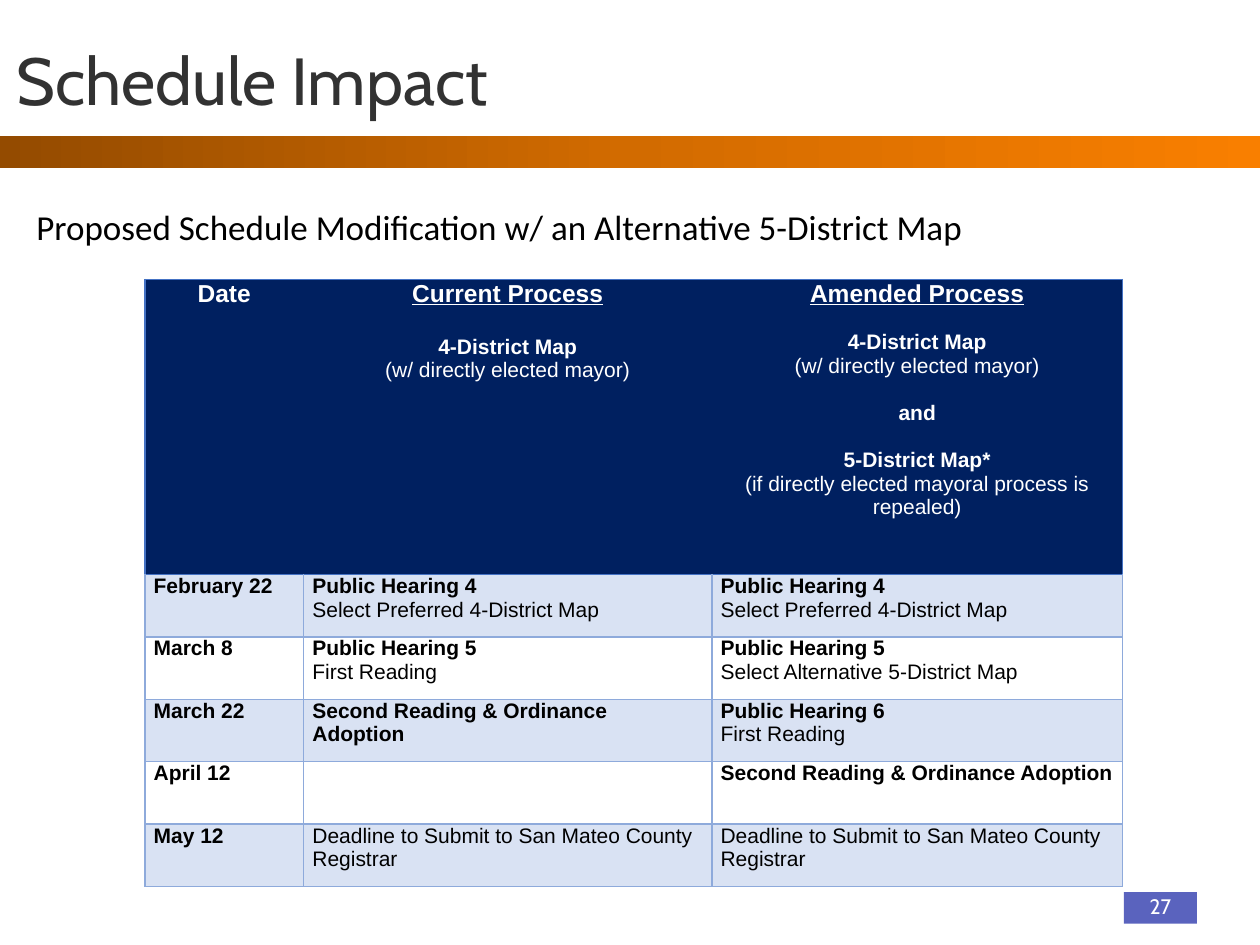
"""Build the Schedule Impact slide with its table of current and amended dates."""
import copy
import pptx
import pptx.dml.color
import pptx.enum.shapes
import pptx.enum.text
import pptx.oxml
import pptx.oxml.ns
import pptx.util

Inches, Pt = pptx.util.Inches, pptx.util.Pt
ALIGN = pptx.enum.text.PP_ALIGN
MIDDLE = pptx.enum.text.MSO_ANCHOR.MIDDLE
RECT = pptx.enum.shapes.MSO_SHAPE.RECTANGLE

COLORS = {
    "title": "323232", "black": "000000", "white": "FFFFFF", "badge": "5A63BE",
    "navy": "002060", "pale": "D9E2F3", "edge": "8EAADB", "rim": "4472C4",
}
BAND = [(0, "944B00"), (0.5, "D26B00"), (1, "F97F00")]

TITLE = "Schedule Impact"
LEAD = "Proposed Schedule Modification w/ an Alternative 5-District Map"
MAYOR = "(w/ directly elected mayor)"
HEAD = [
    [("Date", {"size": 14, "bold": True})],
    [("Current Process", {"size": 14, "bold": True, "under": True}),
     ("4-District Map", {"bold": True, "gap": 16}),
     (MAYOR, {})],
    [("Amended Process", {"size": 14, "bold": True, "under": True}),
     ("4-District Map", {"bold": True, "gap": 13.5}),
     (MAYOR, {}),
     ("and", {"bold": True, "gap": 13.5}),
     ("5-District Map*", {"bold": True, "gap": 13.5}),
     ("(if directly elected mayoral process is repealed)", {})],
]
ADOPT = ("Second Reading & Ordinance Adoption", "")
SUBMIT = ("", "Deadline to Submit to San Mateo County Registrar")
ROWS = [
    ("February 22", ("Public Hearing 4", "Select Preferred 4-District Map"),
     ("Public Hearing 4", "Select Preferred 4-District Map")),
    ("March 8", ("Public Hearing 5", "First Reading"),
     ("Public Hearing 5", "Select Alternative 5-District Map")),
    ("March 22", ADOPT, ("Public Hearing 6", "First Reading")),
    ("April 12", ("", ""), ADOPT),
    ("May 12", SUBMIT, SUBMIT),
]
WIDTHS = [1.26, 3.24, 3.26]
HEAD_H, ROW_H = 2.34, 0.495


def paint(fill, name):
    fill.solid()
    fill.fore_color.rgb = pptx.dml.color.RGBColor.from_string(COLORS[name])


def write(frame, text, size=12, font="Arial", color="black", bold=False,
          under=False, align=ALIGN.LEFT, gap=0, line=None):
    first = frame.paragraphs[0]
    para = frame.add_paragraph() if first.runs else first
    para.alignment = align
    if gap:
        para.space_before = Pt(gap)
    if line:
        para.line_spacing = line
    run = para.add_run()
    run.text = text
    run.font.size, run.font.name = Pt(size), font
    run.font.bold, run.font.underline = bold, under
    run.font.color.rgb = pptx.dml.color.RGBColor.from_string(COLORS[color])


def add_box(slide, place, anchor=pptx.enum.text.MSO_ANCHOR.TOP):
    frame = slide.shapes.add_textbox(*map(Inches, place)).text_frame
    frame.word_wrap = True
    frame.vertical_anchor = anchor
    return frame


def add_rect(slide, place):
    shape = slide.shapes.add_shape(RECT, *map(Inches, place))
    shape.shadow.inherit = False
    shape.line.fill.background()
    return shape


def add_band(slide):
    fill = add_rect(slide, (0, 1.08, 10, 0.25)).fill
    fill.gradient()
    fill.gradient_angle = 0
    last = fill.gradient_stops[1]._gs
    last.addnext(copy.deepcopy(last))
    for stop, (place, tone) in zip(fill.gradient_stops, BAND):
        stop.position = place
        stop.color.rgb = pptx.dml.color.RGBColor.from_string(tone)


def set_edges(cell, edges):
    props = cell._tc.get_or_add_tcPr()
    space = pptx.oxml.ns.nsdecls("a")
    for spot, (side, name) in enumerate(edges.items()):
        inner = (f'<a:solidFill><a:srgbClr val="{COLORS[name]}"/></a:solidFill>'
                 if name else "<a:noFill/>")
        props.insert(spot, pptx.oxml.parse_xml(
            f'<a:{side} {space} w="12700">{inner}</a:{side}>'))


def add_grid(slide):
    place = (1.15, 2.22, sum(WIDTHS), HEAD_H + ROW_H * len(ROWS))
    grid = slide.shapes.add_table(
        len(ROWS) + 1, len(WIDTHS), *map(Inches, place)).table
    for col, width in zip(grid.columns, WIDTHS):
        col.width = Inches(width)
    for r, row in enumerate(grid.rows):
        row.height = Inches(ROW_H if r else HEAD_H)
        for c, cell in enumerate(row.cells):
            cell.margin_left = cell.margin_right = Inches(0.07)
            cell.margin_top = cell.margin_bottom = 0
            if r == 0:
                paint(cell.fill, "navy")
                set_edges(cell, {"lnL": None if c else "rim",
                                 "lnR": "rim" if c == 2 else None,
                                 "lnT": "rim", "lnB": "rim"})
                for text, style in HEAD[c]:
                    write(cell.text_frame, text, color="white",
                          align=ALIGN.CENTER, **style)
                continue
            paint(cell.fill, "pale" if r % 2 else "white")
            set_edges(cell, {"lnL": "edge", "lnR": "edge",
                             "lnT": "rim" if r == 1 else "edge", "lnB": "edge"})
            item = ROWS[r - 1][c]
            strong, plain = item if c else (item, "")
            for text, bold in ((strong, True), (plain, False)):
                if text:
                    write(cell.text_frame, text, bold=bold)


def main():
    deck = pptx.Presentation()
    deck.slide_width, deck.slide_height = Inches(10), Inches(7.5)
    slide = deck.slides.add_slide(deck.slide_layouts[6])
    badge = add_rect(slide, (8.92, 7.08, 0.58, 0.25))
    paint(badge.fill, "badge")
    badge.text_frame.vertical_anchor = MIDDLE
    write(badge.text_frame, "27", font="Cabin", color="white",
          align=ALIGN.CENTER, line=0.9)
    add_band(slide)
    write(add_box(slide, (0.03, 0.25, 8.89, 0.75), MIDDLE), TITLE,
          size=38, font="Cabin", color="title")
    write(add_box(slide, (0.19, 1.58, 9.4, 0.5)), LEAD, size=20, font="Calibri")
    add_grid(slide)
    deck.save("out.pptx")


if __name__ == "__main__":
    main()
